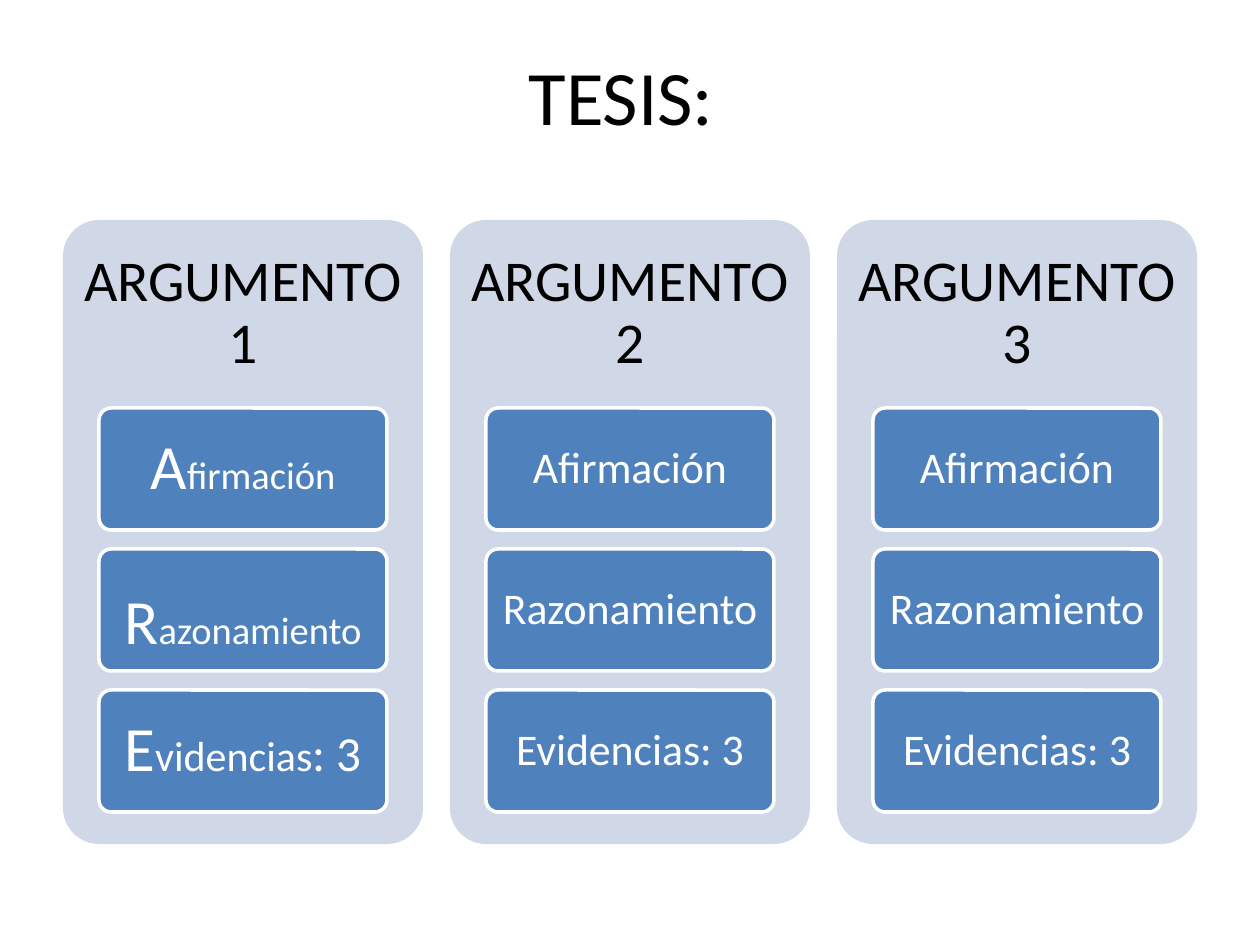
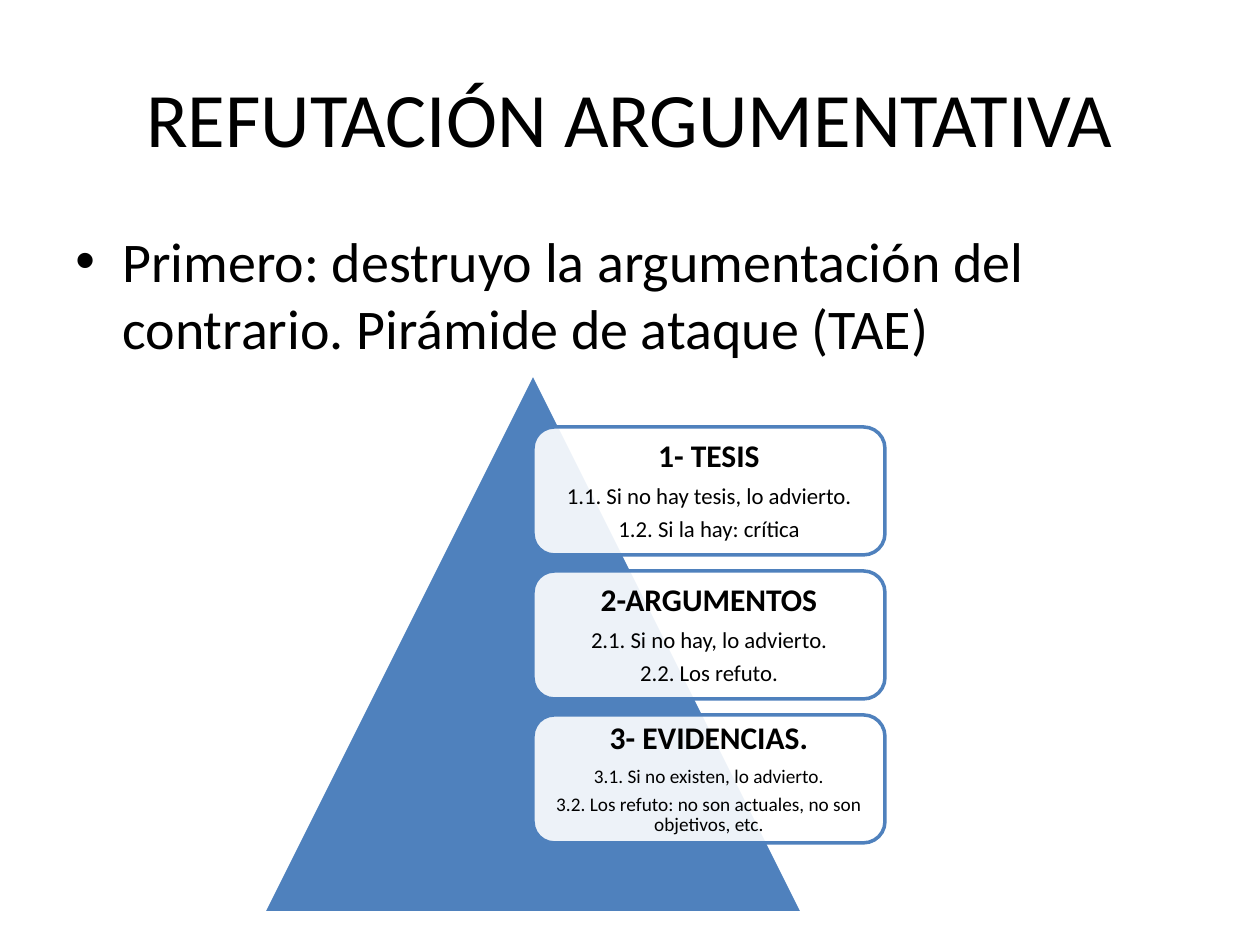
from dataclasses import dataclass

from lxml import etree
from pptx import Presentation
from pptx import util as u
from pptx.dml.color import RGBColor
from pptx.enum import shapes, text
from pptx.oxml.ns import qn

PX = 914400 / 126  # EMU per px


def px(n):
    return u.Emu(round(n * PX))


@dataclass(frozen=True)
class Theme:
    font: str = "Calibri"
    ink: str = "000000"
    white: str = "FFFFFF"
    blue: str = "4F81BD"
    pale: str = "D0D8E8"
    title: int = 44
    body: int = 32
    panel: int = 33
    initial: int = 36
    card: int = 25
    step: int = 18
    line: int = 2


class Deck:
    def __init__(self, theme):
        self.t = theme
        self.prs = Presentation()
        self.prs.slide_width, self.prs.slide_height = px(1260), px(945)
        self.s = None

    def slide(self, title, bottom=6):
        """Start a slide; a larger bottom inset lifts the title."""
        self.s = self.prs.slides.add_slide(self.prs.slide_layouts[5])
        sp = self.s.shapes.title
        sp.left, sp.top, sp.width, sp.height = map(px, (63, 38, 1134, 157))
        tf = sp.text_frame
        tf.text = title
        tf.vertical_anchor = text.MSO_ANCHOR.MIDDLE
        tf.margin_bottom = px(bottom)
        p = tf.paragraphs[0]
        p.alignment = text.PP_ALIGN.CENTER
        self.style(p.runs[0], self.t.title, self.t.ink)

    def style(self, r, size, color, bold=False):
        r.font.name, r.font.size, r.font.bold = self.t.font, u.Pt(size), bold
        r.font.color.rgb = RGBColor.from_string(color)

    def centered(self, sp, paragraphs, color, insets):
        """Centre paragraphs, each a list of (text, size, bold) runs."""
        tf = sp.text_frame
        tf.word_wrap = True
        tf.vertical_anchor = text.MSO_ANCHOR.MIDDLE
        (tf.margin_left, tf.margin_top,
         tf.margin_right, tf.margin_bottom) = map(px, insets)
        for i, runs in enumerate(paragraphs):
            p = tf.add_paragraph() if i else tf.paragraphs[0]
            p.alignment = text.PP_ALIGN.CENTER
            p.line_spacing = 0.9
            p.space_after = u.Pt(0.35 * runs[0][1])
            for words, size, bold in runs:
                r = p.add_run()
                r.text = words
                self.style(r, size, color, bold)

    def shape(self, kind, box, fill, line=None, radius=None, alpha=None):
        sp = self.s.shapes.add_shape(kind, *map(px, box))
        sp.shadow.inherit = False
        if radius is not None:
            sp.adjustments[0] = radius
        sp.fill.solid()
        sp.fill.fore_color.rgb = RGBColor.from_string(fill)
        if alpha is not None:
            clr = sp.element.spPr.find(qn("a:solidFill")).find(qn("a:srgbClr"))
            etree.SubElement(clr, qn("a:alpha")).set("val", str(alpha * 1000))
        if line:
            sp.line.color.rgb = RGBColor.from_string(line)
            sp.line.width = u.Pt(self.t.line)
        else:
            sp.line.fill.background()
        return sp

    def label(self, box, words, size, inset):
        sp = self.s.shapes.add_textbox(*map(px, box))
        self.centered(sp, [[(words, size, False)]], self.t.ink, [inset] * 4)

    def bullet(self, box, words):
        tf = self.s.shapes.add_textbox(*map(px, box)).text_frame
        tf.word_wrap = True
        p = tf.paragraphs[0]
        p.text = words
        p.space_before = u.Pt(0.2 * self.t.body)
        self.style(p.runs[0], self.t.body, self.t.ink)
        pPr = p._p.get_or_add_pPr()
        pPr.set("marL", str(px(47)))
        pPr.set("indent", str(px(-47)))
        etree.SubElement(pPr, qn("a:buFont")).set("typeface", "Arial")
        etree.SubElement(pPr, qn("a:buChar")).set("char", "•")


def argument_slide(d):
    t = d.t
    d.slide("TESIS: ", bottom=50)
    rounded = shapes.MSO_SHAPE.ROUNDED_RECTANGLE

    # First column stresses the initials; the others use plain words
    stressed = [[("A", t.initial, False), ("firmación", 22, False)],
                [("R", t.initial, False), ("azonamiento", 22, False)],
                [("E", t.initial, False), ("videncias", 24, False), (": 3", 28, False)]]
    plain = [[(words, t.card, False)]
             for words in ("Afirmación", "Razonamiento", "Evidencias: 3")]
    stressed_insets = [(12, 9, 12, 9), (12, 37, 12, 9), (12, 9, 12, 9)]
    plain_insets = [(9, 6, 9, 6)] * 3

    for col in range(3):
        x = 63 + 387 * col
        d.shape(rounded, (x, 220, 360, 624), t.pale, radius=0.1)
        d.label((x, 220, 360, 187), f"ARGUMENTO {col + 1}", t.panel, 17)
        cards = zip(plain, plain_insets) if col else zip(stressed, stressed_insets)
        for row, (runs, insets) in enumerate(cards):
            sp = d.shape(rounded, (x + 36, 408 + 141 * row, 288, 122),
                         t.blue, t.white, 0.1)
            d.centered(sp, [runs], t.white, insets)


def refutation_slide(d):
    t = d.t
    d.slide("REFUTACIÓN ARGUMENTATIVA")
    d.bullet((63, 220, 1134, 624),
             "Primero: destruyo la argumentación del contrario. "
             "Pirámide de ataque (TAE)")

    # Pyramid with three attack steps
    d.shape(shapes.MSO_SHAPE.ISOSCELES_TRIANGLE, (263, 373, 540, 540),
            t.blue, t.white)
    steps = [
        ("1- TESIS", 13,
         ["1.1. Si no hay tesis, lo advierto.", "1.2. Si la hay: crítica"]),
        ("2-ARGUMENTOS", 13,
         ["2.1. Si no hay, lo advierto.", "2.2. Los refuto."]),
        ("3- EVIDENCIAS.", 11,
         ["3.1. Si no existen, lo advierto.",
          "3.2. Los refuto: no son actuales, no son objetivos, etc."]),
    ]
    for row, (heading, size, points) in enumerate(steps):
        sp = d.shape(shapes.MSO_SHAPE.ROUNDED_RECTANGLE,
                     (533, 427 + 144 * row, 352, 128),
                     t.white, t.blue, alpha=90)
        paragraphs = [[(heading, t.step, True)]]
        paragraphs += [[(point, size, False)] for point in points]
        d.centered(sp, paragraphs, t.ink, [9] * 4)


def main():
    d = Deck(Theme())
    argument_slide(d)
    refutation_slide(d)
    d.prs.save("out.pptx")


if __name__ == "__main__":
    main()
